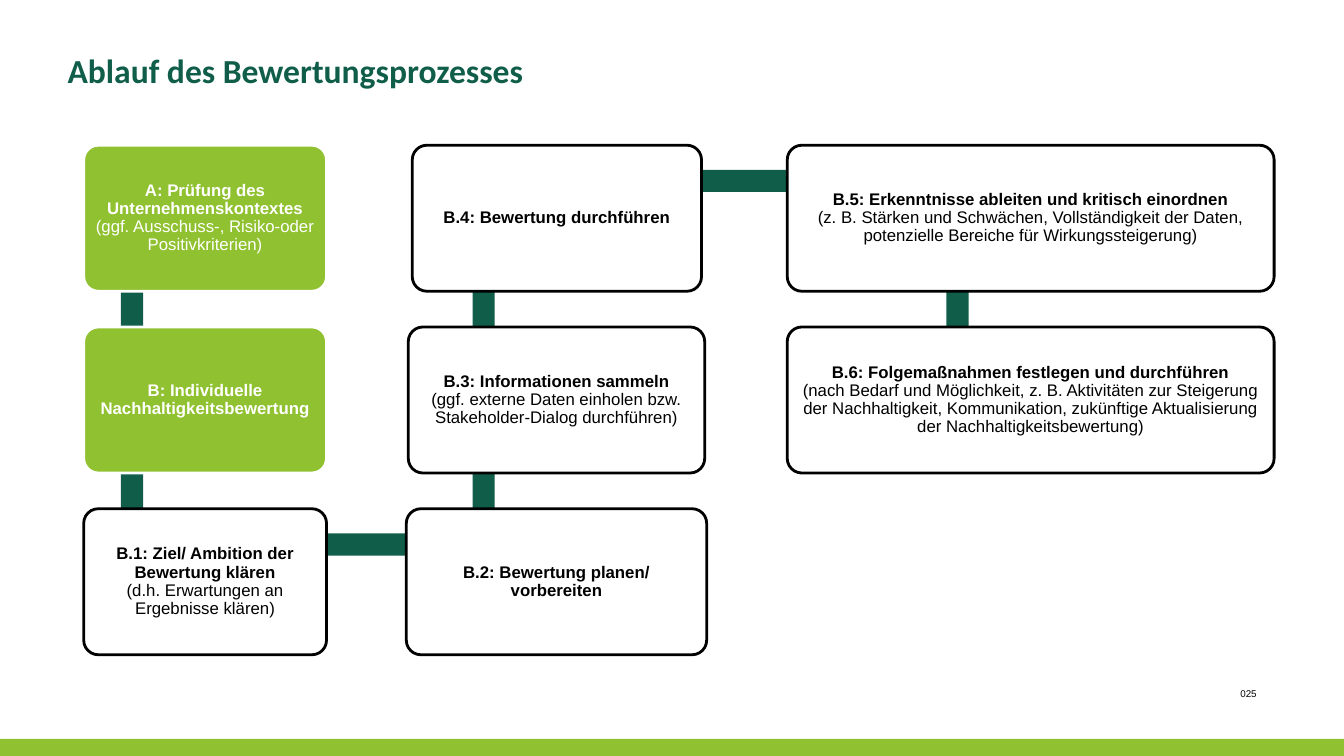
from pptx import Presentation
from pptx.dml.color import RGBColor
from pptx.enum.shapes import MSO_SHAPE
from pptx.enum.text import MSO_ANCHOR, PP_ALIGN
from pptx.util import Cm, Pt

RECTANGLE = MSO_SHAPE.RECTANGLE
ROUNDED = MSO_SHAPE.ROUNDED_RECTANGLE
TOP, MIDDLE = MSO_ANCHOR.TOP, MSO_ANCHOR.MIDDLE
LEFT, CENTER = PP_ALIGN.LEFT, PP_ALIGN.CENTER
LIME = RGBColor(0x90, 0xC1, 0x30)
GREEN = RGBColor(0x10, 0x5E, 0x4A)
WHITE = RGBColor(0xFF, 0xFF, 0xFF)
BLACK = RGBColor(0x00, 0x00, 0x00)

FIRST_ROW, ROW_STEP, STEP_HEIGHT = 3.66, 4.58, 3.68
BAR = 0.56


def add_block(kind, left, top, width, height, fill):
    block = slide.shapes.add_shape(kind, Cm(left), Cm(top), Cm(width), Cm(height))
    block.shadow.inherit = False
    block.fill.solid()
    block.fill.fore_color.rgb = fill
    block.line.fill.background()
    return block


def style_run(run, font, size, color, bold):
    run.font.name = font
    run.font.size = Pt(size)
    run.font.color.rgb = color
    run.font.bold = bold


presentation = Presentation()
presentation.slide_width = Cm(33.87)
presentation.slide_height = Cm(19.05)
slide = presentation.slides.add_slide(presentation.slide_layouts[5])

add_block(RECTANGLE, 0, 18.62, 33.87, 0.43, LIME)

title = slide.shapes.title
title.left, title.top, title.width, title.height = Cm(1.45), Cm(1.14), Cm(30.66), Cm(2.49)
title.text_frame.text = "Ablauf des Bewertungsprozesses"
title.text_frame.vertical_anchor = TOP
title.text_frame.paragraphs[0].alignment = LEFT
style_run(title.text_frame.paragraphs[0].runs[0], "Calibri", 24, GREEN, True)

for center, row in [(3.33, 0), (3.33, 1), (12.19, 1), (12.19, 0), (24.13, 0)]:
    add_block(RECTANGLE, center - BAR / 2, 4.57 + row * ROW_STEP, BAR, ROW_STEP, GREEN)
for left, row, width in [(3.35, 2, 8.84), (12.22, 0, 11.91)]:
    add_block(RECTANGLE, left, 4.28 + row * ROW_STEP, width, BAR, GREEN)

steps = [
    (2.11, 0, 6.12, LIME, "A: Prüfung des Unternehmenskontextes",
     "(ggf. Ausschuss-, Risiko-oder Positivkriterien)"),
    (2.11, 1, 6.12, LIME, "B: Individuelle Nachhaltigkeitsbewertung", ""),
    (2.11, 2, 6.12, WHITE, "B.1: Ziel/ Ambition der Bewertung klären",
     "(d.h. Erwartungen an Ergebnisse klären)"),
    (10.24, 2, 7.57, WHITE, "B.2: Bewertung planen/ vorbereiten", ""),
    (10.29, 1, 7.47, WHITE, "B.3: Informationen sammeln",
     "(ggf. externe Daten einholen bzw. Stakeholder-Dialog durchführen)"),
    (10.39, 0, 7.29, WHITE, "B.4: Bewertung durchführen", ""),
    (19.84, 0, 12.27, WHITE, "B.5: Erkenntnisse ableiten und kritisch einordnen",
     "(z. B. Stärken und Schwächen, Vollständigkeit der Daten, "
     "potenzielle Bereiche für Wirkungssteigerung)"),
    (19.84, 1, 12.27, WHITE, "B.6: Folgemaßnahmen festlegen und durchführen",
     "(nach Bedarf und Möglichkeit, z. B. Aktivitäten zur Steigerung der Nachhaltigkeit, "
     "Kommunikation, zukünftige Aktualisierung der Nachhaltigkeitsbewertung)"),
]
for left, row, width, fill, heading, detail in steps:
    step = add_block(ROUNDED, left, FIRST_ROW + row * ROW_STEP, width, STEP_HEIGHT, fill)
    step.adjustments[0] = 0.1
    step.line.color.rgb = WHITE if fill == LIME else BLACK
    step.line.width = Pt(2)
    frame = step.text_frame
    frame.word_wrap = True
    frame.vertical_anchor = MIDDLE
    frame.margin_left = frame.margin_right = Cm(0.12)
    frame.margin_top = frame.margin_bottom = Cm(0.12)
    frame.text = heading
    paragraph = frame.paragraphs[0]
    if detail:
        paragraph.text = heading + "\v" + detail
    paragraph.alignment = CENTER
    paragraph.line_spacing = 0.9
    for position, run in enumerate(paragraph.runs):
        style_run(run, "Arial", 12, WHITE if fill == LIME else BLACK, position == 0)

page_number = slide.shapes.add_textbox(Cm(31.01), Cm(17.22), Cm(1.65), Cm(0.53))
page_number.text_frame.word_wrap = True
page_number.text_frame.margin_top = page_number.text_frame.margin_bottom = Cm(0.1)
page_number.text_frame.text = "025"
style_run(page_number.text_frame.paragraphs[0].runs[0], "Arial", 7, BLACK, False)

presentation.save("out.pptx")
